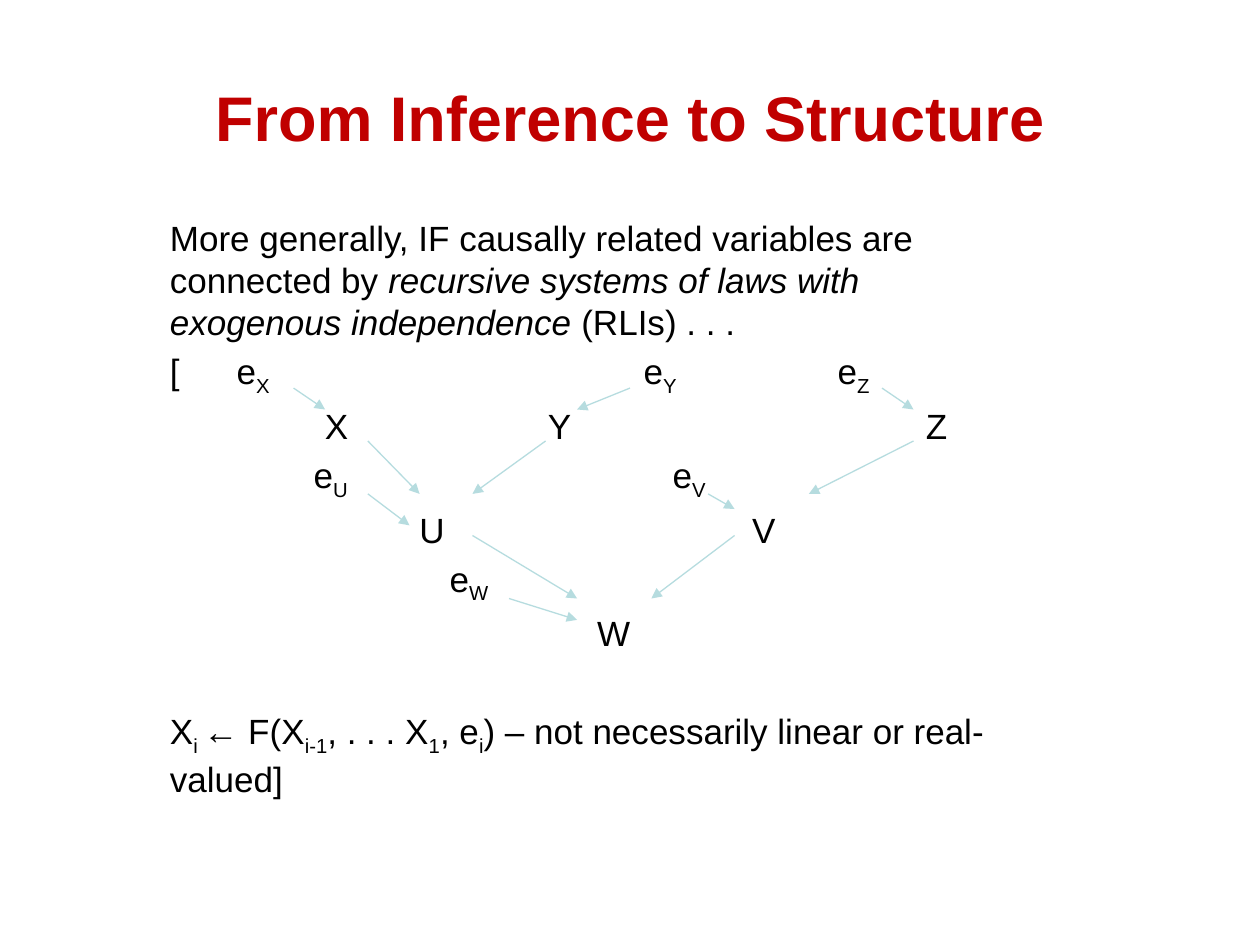
"""Build a slide showing a recursive causal system with independent exogenous terms."""

from dataclasses import dataclass

from lxml.etree import SubElement
from pptx import Presentation
from pptx.dml.color import RGBColor
from pptx.enum.shapes import MSO_CONNECTOR
from pptx.enum.text import MSO_ANCHOR, PP_ALIGN
from pptx.oxml.ns import qn
from pptx.slide import Slide
from pptx.text.text import TextFrame, _Paragraph
from pptx.util import Inches, Pt

RED = RGBColor(0xC0, 0x00, 0x00)
BLACK = RGBColor(0x00, 0x00, 0x00)
PALE_TEAL = RGBColor(0xB6, 0xDC, 0xDF)
FONT = "Arial"
PARAGRAPH_GAP = 4
FORMULA_GAP = 32


@dataclass(frozen=True)
class Segment:
    text: str
    italic: bool = False
    subscript: bool = False


@dataclass(frozen=True)
class Line:
    segments: tuple[Segment, ...]
    tab_stops: tuple[float, ...] = ()
    gap: float = PARAGRAPH_GAP


@dataclass(frozen=True)
class Arrow:
    start: tuple[float, float]
    end: tuple[float, float]


def indexed(text: str) -> tuple[Segment, ...]:
    """Split text at bars, every second piece being a subscript."""
    return tuple(
        Segment(piece, subscript=index % 2 == 1)
        for index, piece in enumerate(text.split("|"))
        if piece
    )


LINES = (
    Line((
        Segment("More generally, IF causally related variables are connected by "),
        Segment("recursive systems of laws with exogenous independence", italic=True),
        Segment(" (RLIs) . . ."),
    )),
    Line(indexed("[\te|X|\te|Y|\te|Z"), (0.53, 3.76, 5.3)),
    Line(indexed("\tX\tY\tZ"), (1.23, 3, 6)),
    Line(indexed("\te|U|\te|V"), (1.14, 3.99)),
    Line(indexed("\tU\tV"), (1.98, 4.62)),
    Line(indexed("\te|W"), (2.22,)),
    Line(indexed("\tW"), (3.39,)),
    Line(
        indexed("X|i |← F(X|i-1|, . . . X|1|, e|i|) – not necessarily linear or real-valued]"),
        gap=FORMULA_GAP,
    ),
)

ARROWS = (
    Arrow((2.33, 3.08), (2.58, 3.25)),
    Arrow((2.92, 3.5), (3.33, 3.92)),
    Arrow((4.33, 3.5), (3.75, 3.92)),
    Arrow((5.83, 4.25), (5.17, 4.75)),
    Arrow((3.75, 4.25), (4.58, 4.75)),
    Arrow((7.25, 3.5), (6.42, 3.92)),
    Arrow((5, 3.08), (4.58, 3.25)),
    Arrow((7, 3.08), (7.25, 3.25)),
    Arrow((5.62, 3.92), (5.83, 4.04)),
    Arrow((2.92, 3.92), (3.25, 4.17)),
    Arrow((4.04, 4.75), (4.58, 4.92)),
)


def add_text(
    paragraph: _Paragraph,
    text: str,
    *,
    size: float = 20,
    color: RGBColor = BLACK,
    bold: bool = False,
    italic: bool = False,
    subscript: bool = False,
) -> None:
    """Append one formatted run to a paragraph."""
    run = paragraph.add_run()
    run.text = text
    run.font.name = FONT
    run.font.size = Pt(size)
    run.font.color.rgb = color
    run.font.bold = bold
    run.font.italic = italic
    if subscript:
        run._r.get_or_add_rPr().set("baseline", "-25000")


def add_title(slide: Slide, text: str) -> None:
    """Place and format the title placeholder."""
    title = slide.shapes.title
    title.left, title.top = Inches(0.5), Inches(0.28)
    title.width, title.height = Inches(9), Inches(1.28)
    title.text_frame.vertical_anchor = MSO_ANCHOR.MIDDLE
    paragraph = title.text_frame.paragraphs[0]
    paragraph.alignment = PP_ALIGN.CENTER
    add_text(paragraph, text, size=36, color=RED, bold=True)


def add_line(text_frame: TextFrame, line: Line, first: bool) -> None:
    """Write one line of the body with its tab stops."""
    paragraph = text_frame.paragraphs[0] if first else text_frame.add_paragraph()
    paragraph.alignment = PP_ALIGN.LEFT
    paragraph.space_before = Pt(line.gap)
    if line.tab_stops:
        tab_list = SubElement(paragraph._p.get_or_add_pPr(), qn("a:tabLst"))
        for position in line.tab_stops:
            SubElement(tab_list, qn("a:tab"), pos=str(Inches(position)), algn="l")
    for segment in line.segments:
        add_text(paragraph, segment.text, italic=segment.italic, subscript=segment.subscript)


def add_arrow(slide: Slide, arrow: Arrow) -> None:
    """Draw one causal arrow."""
    points = (Inches(value) for value in arrow.start + arrow.end)
    connector = slide.shapes.add_connector(MSO_CONNECTOR.STRAIGHT, *points)
    connector.line.color.rgb = PALE_TEAL
    connector.line.width = Pt(0.75)
    SubElement(connector.line._get_or_add_ln(), qn("a:tailEnd"), type="triangle")
    SubElement(connector._element.spPr, qn("a:effectLst"))


def main() -> None:
    """Build and save the slide."""
    presentation = Presentation()
    presentation.slide_width, presentation.slide_height = Inches(10), Inches(7.5)
    slide = presentation.slides.add_slide(presentation.slide_layouts[5])
    add_title(slide, "From Inference to Structure")
    body = slide.shapes.add_textbox(Inches(1.25), Inches(1.67), Inches(7.08), Inches(5))
    body.text_frame.word_wrap = True
    for index, line in enumerate(LINES):
        add_line(body.text_frame, line, first=index == 0)
    for arrow in ARROWS:
        add_arrow(slide, arrow)
    presentation.save("out.pptx")


if __name__ == "__main__":
    main()
